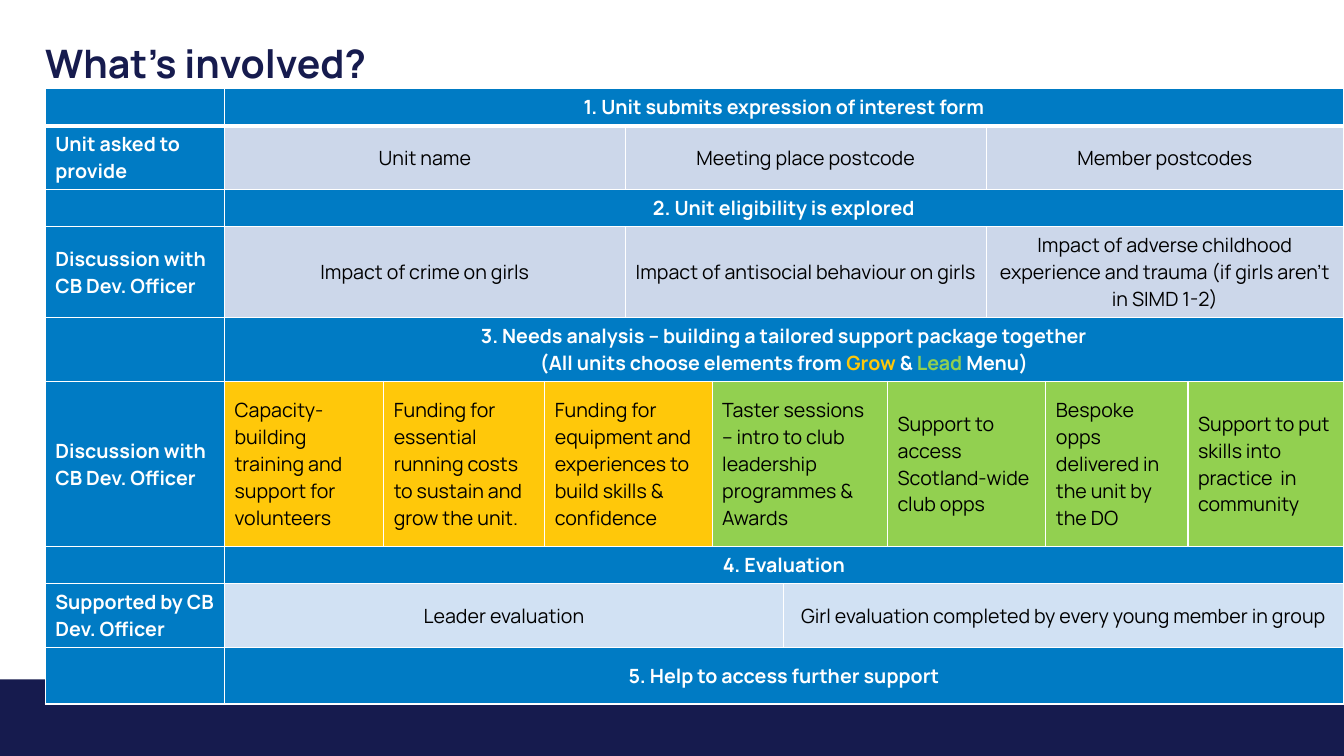
from dataclasses import dataclass

from lxml.etree import SubElement
from pptx import Presentation
from pptx.dml.color import RGBColor
from pptx.enum.shapes import MSO_SHAPE
from pptx.enum.text import MSO_ANCHOR as Anchor, PP_ALIGN as Align
from pptx.oxml.ns import qn
from pptx.util import Cm, Pt


@dataclass(frozen=True)
class Theme:
    font: str = "Manrope"
    navy: str = "161B4E"
    blue: str = "007BC4"
    grey_blue: str = "CCD7EA"
    pale_blue: str = "D1E1F3"
    grow: str = "FFC80A"
    lead: str = "92D050"
    white: str = "FFFFFF"
    black: str = "000000"
    title_size: int = 28
    body_size: int = 14


THEME = Theme()


@dataclass
class Entry:
    """One table cell: its content, the columns it covers and its look."""
    content: object
    span: int
    fill: str
    align: Align = Align.CENTER
    color: str = THEME.black
    bold: bool = False
    anchor: Anchor = Anchor.MIDDLE


def label(content=""):
    return Entry(content, 1, THEME.blue, Align.LEFT, THEME.white, True)


def stage(*lines, anchor=Anchor.MIDDLE):
    """A row with an empty label and one heading across the other columns."""
    heading = Entry(lines, 10, THEME.blue, Align.CENTER, THEME.white, True, anchor)
    return [label(), heading]


def details(name, fill, *parts):
    return [label(name)] + [Entry(content, span, fill) for content, span in parts]


def menu(fill, *parts):
    return [Entry(content, span, fill, Align.LEFT) for content, span in parts]


COLUMN_WIDTHS = [4.52, 4.01, 4.06, 2.03, 2.19, 1.8, 2.62, 2.49, 1.5, 3.58, 3.92]

PROCESS = [
    (0.81, stage("1. Unit submits expression of interest form", anchor=Anchor.TOP)),
    (1.37, details("Unit asked to provide", THEME.grey_blue,
                   ("Unit name", 3),
                   ("Meeting place postcode", 4),
                   ("Member postcodes", 3))),
    (0.81, stage("2. Unit eligibility is explored")),
    (1.93, details("Discussion with CB Dev. Officer", THEME.grey_blue,
                   ("Impact of crime on girls", 3),
                   ("Impact of antisocial behaviour on girls", 4),
                   ("Impact of adverse childhood experience and trauma "
                    "(if girls aren’t in SIMD 1-2)", 3))),
    (1.37, stage("3. Needs analysis – building a tailored support package together",
                 [("(All units choose elements from ", THEME.white),
                  ("Grow", THEME.grow), (" & ", THEME.white),
                  ("Lead", THEME.lead), (" Menu)", THEME.white)])),
    (4.17, [label("Discussion with CB Dev. Officer")]
     + menu(THEME.grow,
            ("Capacity-building training and support for volunteers", 1),
            ("Funding for essential running costs to sustain and grow the unit.", 1),
            ("Funding for equipment and experiences to build skills & confidence", 2))
     + menu(THEME.lead,
            ("Taster sessions – intro to club leadership programmes & Awards", 2),
            ("Support to access Scotland-wide club opps", 2),
            ("Bespoke opps delivered in the unit by the DO", 1),
            ("Support to put skills into practice  in community", 1))),
    (0.81, stage("4. Evaluation", anchor=Anchor.TOP)),
    (1.57, details("Supported by CB Dev. Officer", THEME.pale_blue,
                   ("Leader evaluation", 5),
                   ("Girl evaluation completed by every young member in group", 5))),
    (1.42, stage("5. Help to access further support")),
]


def write(frame, content, size=THEME.body_size, color=THEME.black, bold=False,
          align=Align.LEFT, line_spacing=None):
    """Fill a frame with a string, or with lines made of strings or coloured runs."""
    lines = [content] if isinstance(content, str) else content
    for index, line in enumerate(lines):
        paragraph = frame.paragraphs[0] if index == 0 else frame.add_paragraph()
        paragraph.alignment = align
        if line_spacing:
            paragraph.line_spacing = line_spacing
        if not line:
            end = SubElement(paragraph._p, qn("a:endParaRPr"), sz=str(size * 100))
            SubElement(end, qn("a:latin"), typeface=THEME.font)
            continue
        for words, run_color in [(line, color)] if isinstance(line, str) else line:
            run = paragraph.add_run()
            run.text = words
            run.font.name = THEME.font
            run.font.size = Pt(size)
            run.font.bold = bold
            run.font.color.rgb = RGBColor.from_string(run_color)


def paint(cell, fill, bottom):
    """Give a cell white borders, then its fill."""
    properties = cell._tc.get_or_add_tcPr()
    for side, width in (("L", 1), ("R", 1), ("T", 1), ("B", bottom)):
        border = SubElement(properties, qn(f"a:ln{side}"), w=str(Pt(width)))
        solid = SubElement(border, qn("a:solidFill"))
        SubElement(solid, qn("a:srgbClr"), val=THEME.white)
    cell.fill.solid()
    cell.fill.fore_color.rgb = RGBColor.from_string(fill)


def add_footer(slide, left, top, width, height):
    footer = slide.shapes.add_shape(MSO_SHAPE.RECTANGLE, left, top, width, height)
    footer.shadow.inherit = False
    footer.fill.solid()
    footer.fill.fore_color.rgb = RGBColor.from_string(THEME.navy)
    footer.line.fill.background()


def add_title(slide, left, top, width, height):
    frame = slide.shapes.add_textbox(left, top, width, height).text_frame
    frame.word_wrap = True
    frame.vertical_anchor = Anchor.MIDDLE
    frame.margin_left = frame.margin_right = 0
    frame.margin_top = frame.margin_bottom = 0
    write(frame, "What’s involved?", size=THEME.title_size, color=THEME.navy,
          bold=True, line_spacing=0.9)


def add_process(slide, left, top, width, height):
    table = slide.shapes.add_table(len(PROCESS), len(COLUMN_WIDTHS),
                                   left, top, width, height).table
    table.horz_banding = False
    for column, column_width in zip(table.columns, COLUMN_WIDTHS):
        column.width = Cm(column_width)
    for row, (row_height, entries) in enumerate(PROCESS):
        table.rows[row].height = Cm(row_height)
        start = 0
        for entry in entries:
            end = start + entry.span
            for column in range(start, end):
                paint(table.cell(row, column), entry.fill, 3 if row == 0 else 1)
            cell = table.cell(row, start)
            if entry.span > 1:
                cell.merge(table.cell(row, end - 1))
            cell.vertical_anchor = entry.anchor
            write(cell.text_frame, entry.content, color=entry.color,
                  bold=entry.bold, align=entry.align)
            start = end


def main():
    deck = Presentation()
    deck.slide_width, deck.slide_height = Cm(33.87), Cm(19.05)
    slide = deck.slides.add_slide(deck.slide_layouts[6])
    margin, footer_top = Cm(1.14), Cm(17.12)
    add_footer(slide, 0, footer_top, deck.slide_width, deck.slide_height - footer_top)
    add_process(slide, margin, Cm(2.24), Cm(sum(COLUMN_WIDTHS)),
                Cm(sum(row_height for row_height, _ in PROCESS)))
    add_title(slide, margin, Cm(1.12), deck.slide_width - 2 * margin, Cm(1.09))
    deck.save("out.pptx")


if __name__ == "__main__":
    main()
